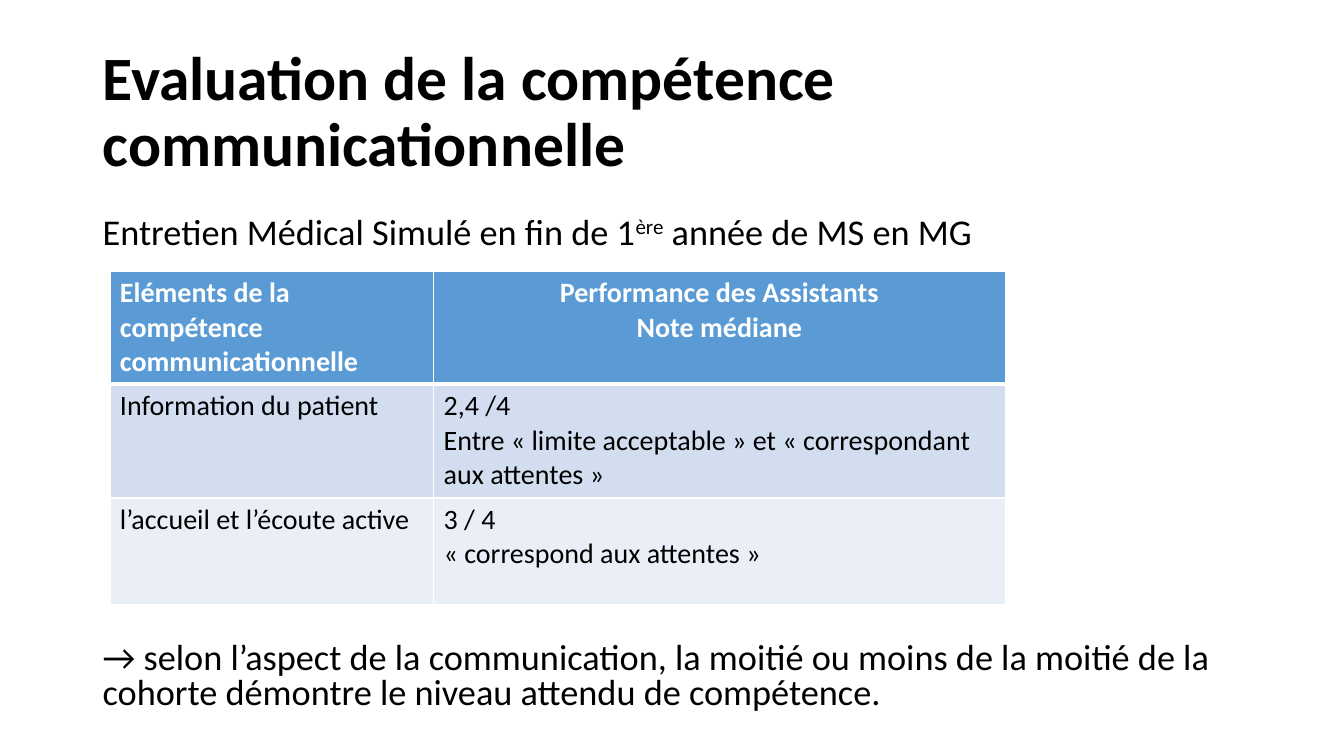
from lxml import etree
from pptx import Presentation
from pptx.dml.color import RGBColor
from pptx.enum.text import MSO_ANCHOR, PP_ALIGN
from pptx.oxml.ns import qn
from pptx.util import Inches, Pt

LEFT, CENTER = PP_ALIGN.LEFT, PP_ALIGN.CENTER
TOP, MIDDLE = MSO_ANCHOR.TOP, MSO_ANCHOR.MIDDLE

THEME = {
    "font": "Calibri",
    "black": "000000",
    "white": "FFFFFF",
    "header_fill": "5B9BD5",
    "band_fills": ("D2DEEF", "EAEFF7"),
    "title_size": 44,
    "body_size": 25.9,
    "table_size": 20,
    "superscript": 30000,
    "border": 1,
    "header_border": 3,
}

# Each text is a list of (words, is superscript) runs.
TITLE = [("Evaluation de la compétence communicationnelle", False)]
SUBTITLE = [
    ("Entretien Médical Simulé en fin de 1", False),
    ("ère", True),
    (" année de MS en MG", False),
]
CONCLUSION = [
    ("→ selon l’aspect de la communication, la moitié ou moins de la moitié "
     "de la cohorte démontre le niveau attendu de compétence.", False),
]

TEXT_BOXES = [
    {"runs": TITLE, "at": (0.92, 0.4, 11.77, 1.45), "anchor": MIDDLE,
     "spacing": 0.9, "size": THEME["title_size"], "bold": True},
    {"runs": SUBTITLE, "at": (0.92, 2.11, 11.5, 0.5), "anchor": TOP,
     "spacing": 0.8, "size": THEME["body_size"], "bold": False},
    {"runs": CONCLUSION, "at": (0.92, 6.33, 11.5, 0.85), "anchor": TOP,
     "spacing": 0.8, "size": THEME["body_size"], "bold": False},
]

# Each cell is a list of paragraphs.
TABLE_ROWS = [
    [["Eléments de la compétence communicationnelle"],
     ["Performance des Assistants", "Note médiane"]],
    [["Information du patient"],
     ["2,4 /4", "Entre « limite acceptable » et « correspondant aux attentes »"]],
    [["l’accueil et l’écoute active"],
     ["3 / 4", "« correspond aux attentes »"]],
]
TABLE_ORIGIN = (1.09, 2.69)
COLUMN_WIDTHS = (3.21, 5.67)
ROW_HEIGHTS = (1.12, 1.13, 1.06)


def add_run(paragraph, text, size, color, bold):
    run = paragraph.add_run()
    run.text = text
    formats = {"name": THEME["font"], "size": Pt(size), "bold": bold}
    for name, value in formats.items():
        setattr(run.font, name, value)
    run.font.color.rgb = RGBColor.from_string(color)
    return run


def add_text_box(slide, box):
    shape = slide.shapes.add_textbox(*map(Inches, box["at"]))
    frame = shape.text_frame
    frame.word_wrap = True
    frame.vertical_anchor = box["anchor"]
    paragraph = frame.paragraphs[0]
    paragraph.line_spacing = box["spacing"]
    for text, is_superscript in box["runs"]:
        run = add_run(paragraph, text, box["size"], THEME["black"], box["bold"])
        if is_superscript:
            properties = run._r.get_or_add_rPr()
            properties.set("baseline", str(THEME["superscript"]))


def set_borders(cell, widths):
    """Draw white borders; widths maps a side (L, R, T, B) to points."""
    properties = cell._tc.get_or_add_tcPr()
    for index, (side, width) in enumerate(widths.items()):
        line = etree.Element(qn(f"a:ln{side}"), w=str(Pt(width)))
        fill = etree.SubElement(line, qn("a:solidFill"))
        etree.SubElement(fill, qn("a:srgbClr"), val=THEME["white"])
        properties.insert(index, line)


def fill_cell(cell, lines, row_index, column_index):
    is_header = row_index == 0
    bands = THEME["band_fills"]
    fill = THEME["header_fill"] if is_header else bands[(row_index - 1) % len(bands)]
    color = THEME["white"] if is_header else THEME["black"]
    cell.fill.solid()
    cell.fill.fore_color.rgb = RGBColor.from_string(fill)
    thin, thick = THEME["border"], THEME["header_border"]
    set_borders(cell, {
        "L": thin,
        "R": thin,
        "T": thick if row_index == 1 else thin,
        "B": thick if is_header else thin,
    })
    frame = cell.text_frame
    for index, text in enumerate(lines):
        paragraph = frame.add_paragraph() if index else frame.paragraphs[0]
        paragraph.alignment = CENTER if is_header and column_index else LEFT
        add_run(paragraph, text, THEME["table_size"], color, is_header)


def add_results_table(slide):
    size = (sum(COLUMN_WIDTHS), sum(ROW_HEIGHTS))
    frame = slide.shapes.add_table(
        len(ROW_HEIGHTS), len(COLUMN_WIDTHS), *map(Inches, TABLE_ORIGIN + size))
    table = frame.table
    for column, width in zip(table.columns, COLUMN_WIDTHS):
        column.width = Inches(width)
    for row, height in zip(table.rows, ROW_HEIGHTS):
        row.height = Inches(height)
    for row_index, row in enumerate(TABLE_ROWS):
        for column_index, lines in enumerate(row):
            cell = table.cell(row_index, column_index)
            fill_cell(cell, lines, row_index, column_index)


def main():
    presentation = Presentation()
    presentation.slide_width = Inches(13.33)
    presentation.slide_height = Inches(7.5)
    slide = presentation.slides.add_slide(presentation.slide_layouts[6])
    for box in TEXT_BOXES:
        add_text_box(slide, box)
    add_results_table(slide)
    presentation.save("out.pptx")


if __name__ == "__main__":
    main()
